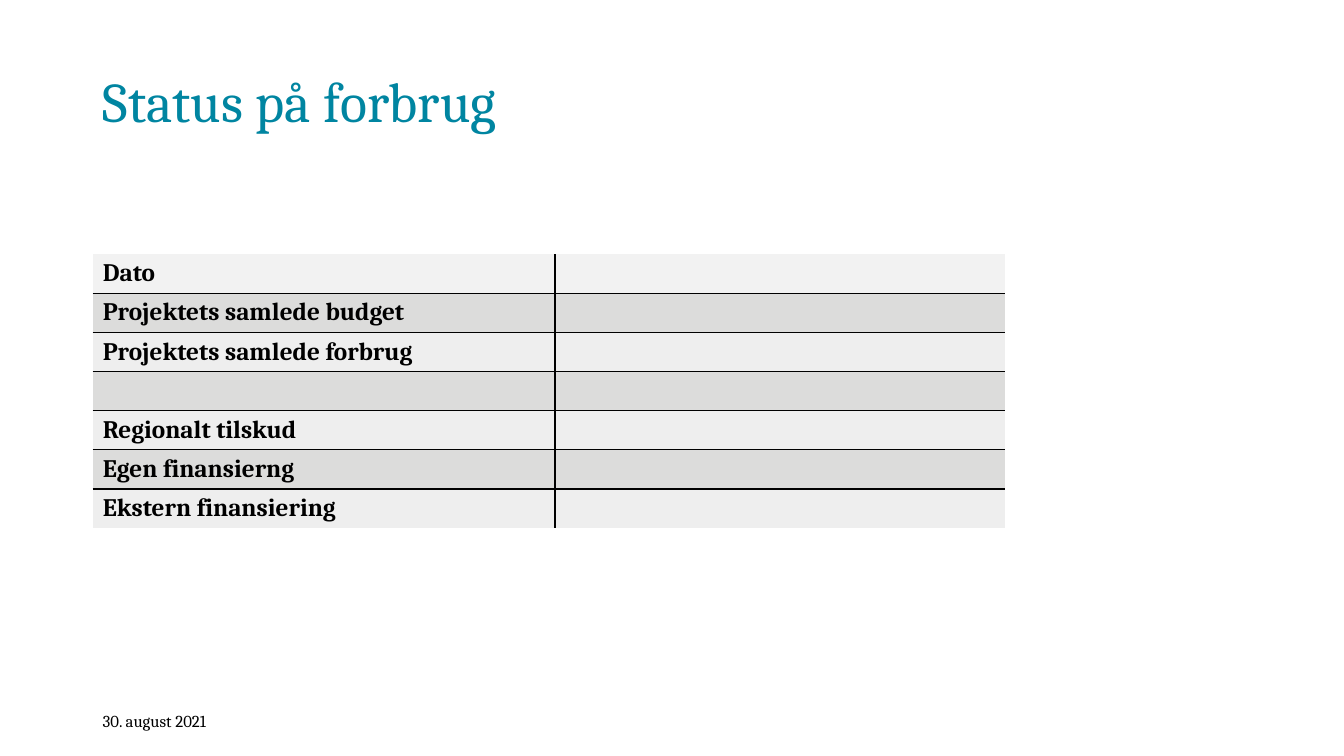
import pptx
import pptx.dml.color
import pptx.enum.text
import pptx.oxml.ns
import pptx.util
from lxml import etree

RGBColor = pptx.dml.color.RGBColor
Anchor = pptx.enum.text.MSO_ANCHOR
TEAL = RGBColor(0x00, 0x85, 0xA1)
BLACK = RGBColor(0x00, 0x00, 0x00)
HEADER_GREY = RGBColor(0xF2, 0xF2, 0xF2)
DARK_GREY = RGBColor(0xDC, 0xDC, 0xDB)
LIGHT_GREY = RGBColor(0xEE, 0xEE, 0xEE)

WIDTH, HEIGHT = pptx.util.Inches(13.33), pptx.util.Inches(7.5)
COLUMN, ROW = WIDTH / 100, HEIGHT / 100  # the grid is 100 by 100
LEFT = 6.9  # left edge of all content, in grid columns
BUDGET_ITEMS = [
    "Dato",
    "Projektets samlede budget",
    "Projektets samlede forbrug",
    "",
    "Regionalt tilskud",
    "Egen finansierng",
    "Ekstern finansiering",
]


class StatusSlide:
    """Holds the font and the slide; positions are in grid columns and rows."""

    font_name = "Cambria"

    def __init__(self, presentation):
        self.slide = presentation.slides.add_slide(presentation.slide_layouts[5])

    def box(self, left, top, width, height):
        return (round(left * COLUMN), round(top * ROW),
                round(width * COLUMN), round(height * ROW))

    def add_text(self, paragraph, text, size, color, bold=False):
        run = paragraph.add_run()
        run.text = text
        run.font.name = self.font_name
        run.font.size = pptx.util.Pt(size)
        run.font.bold = bold
        run.font.color.rgb = color

    def title(self, text, *area):
        heading = self.slide.shapes.title
        heading.left, heading.top, heading.width, heading.height = self.box(*area)
        frame = heading.text_frame
        frame.auto_size = pptx.enum.text.MSO_AUTO_SIZE.NONE
        frame.vertical_anchor = Anchor.BOTTOM
        paragraph = frame.paragraphs[0]
        paragraph.alignment = pptx.enum.text.PP_ALIGN.LEFT
        paragraph.line_spacing = pptx.util.Pt(40)
        self.add_text(paragraph, text, 40, TEAL)

    def date(self, text, *area):
        frame = self.slide.shapes.add_textbox(*self.box(*area)).text_frame
        frame.word_wrap = True
        frame.vertical_anchor = Anchor.MIDDLE
        self.add_text(frame.paragraphs[0], text, 12, BLACK)

    def border(self, cell, side, visible):
        """Draw one cell edge in black, or clear it; call before filling."""
        line = etree.SubElement(cell._tc.get_or_add_tcPr(),
                                pptx.oxml.ns.qn(f"a:ln{side}"),
                                w=str(pptx.util.Pt(1)))
        if not visible:
            etree.SubElement(line, pptx.oxml.ns.qn("a:noFill"))
            return
        ink = etree.SubElement(line, pptx.oxml.ns.qn("a:solidFill"))
        etree.SubElement(ink, pptx.oxml.ns.qn("a:srgbClr"), val=str(BLACK))

    def budget_table(self, items, column_widths, *area):
        table = self.slide.shapes.add_table(
            len(items), len(column_widths), *self.box(*area)).table
        table.first_row = table.horz_banding = False
        for column, width in zip(table.columns, column_widths):
            column.width = round(width * COLUMN)
        last_row, last_column = len(items) - 1, len(column_widths) - 1
        for r, item in enumerate(items):
            shade = HEADER_GREY if r == 0 else (LIGHT_GREY, DARK_GREY)[r % 2]
            for c in range(len(column_widths)):
                cell = table.cell(r, c)
                cell.margin_top = cell.margin_bottom = 0
                cell.vertical_anchor = Anchor.MIDDLE
                edges = {"L": c > 0, "R": c < last_column,
                         "T": r > 0, "B": r < last_row}
                for side, visible in edges.items():
                    self.border(cell, side, visible)
                cell.fill.solid()
                cell.fill.fore_color.rgb = shade
            if item:
                label = table.cell(r, 0).text_frame.paragraphs[0]
                self.add_text(label, item, 18, BLACK, bold=True)


def main():
    presentation = pptx.Presentation()
    presentation.slide_width, presentation.slide_height = WIDTH, HEIGHT
    status = StatusSlide(presentation)
    status.title("Status på forbrug", LEFT, 2.5, 74.5, 15.9)
    status.date("30. august 2021", LEFT, 92.7, 22.5, 5.3)
    status.budget_table(BUDGET_ITEMS, (34.4, 33.5), LEFT, 33.6, 67.9, 36.3)
    presentation.save("out.pptx")


if __name__ == "__main__":
    main()
